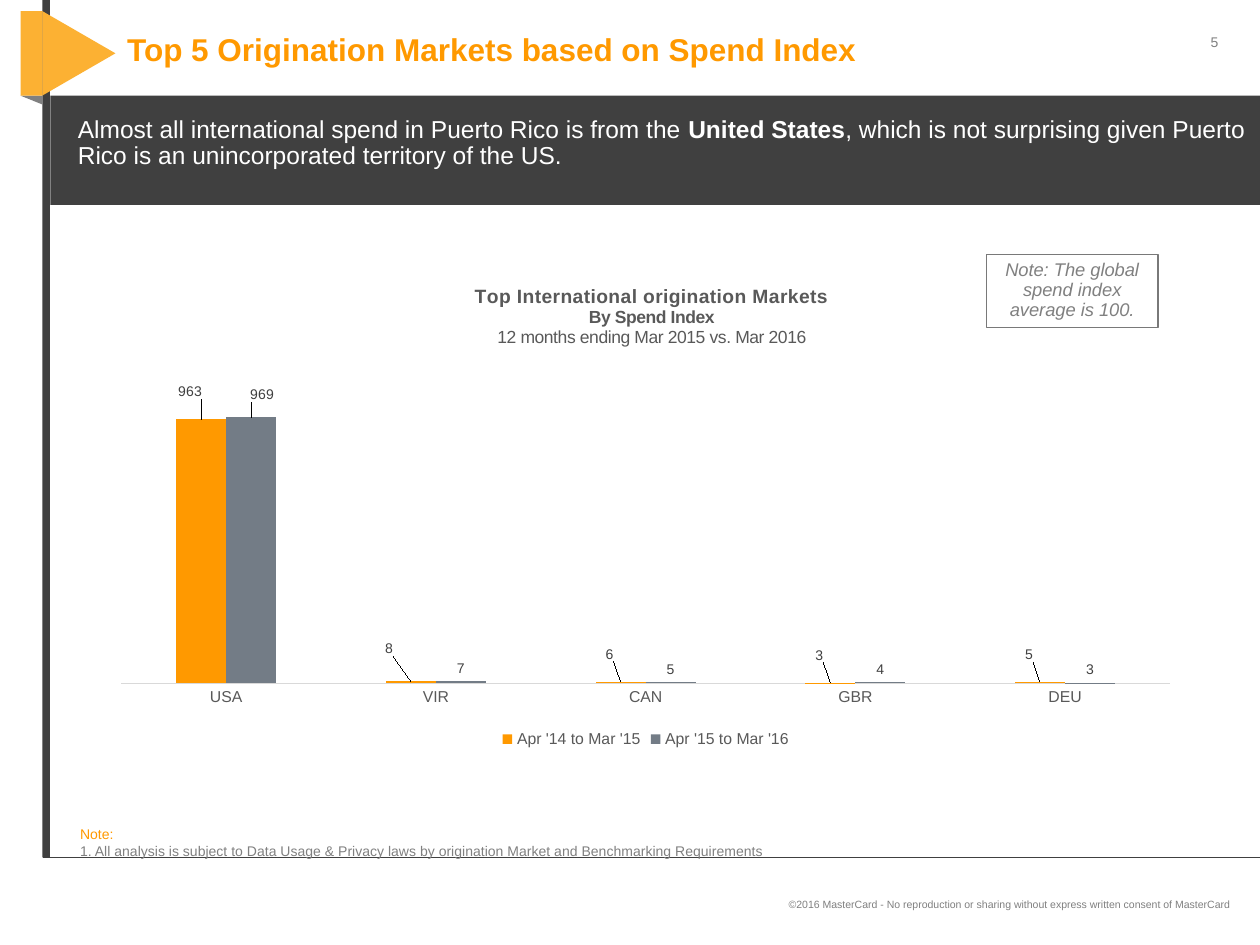
from lxml.etree import SubElement
from pptx import Presentation
from pptx.chart.data import CategoryChartData
from pptx.dml.color import RGBColor
from pptx.enum.chart import XL_CHART_TYPE, XL_LABEL_POSITION, XL_LEGEND_POSITION, XL_TICK_MARK
from pptx.enum.shapes import MSO_CONNECTOR, MSO_SHAPE
from pptx.enum.text import MSO_ANCHOR, MSO_AUTO_SIZE, PP_ALIGN
from pptx.oxml import parse_xml
from pptx.oxml.ns import nsdecls, qn
from pptx.util import Pt

ORANGE = RGBColor(0xFF, 0x99, 0x00)
AMBER = RGBColor(0xFC, 0xB1, 0x33)
SLATE = RGBColor(0x73, 0x7C, 0x86)
DARK = RGBColor(0x40, 0x40, 0x40)
TEXT = RGBColor(0x59, 0x59, 0x59)
BORDER = RGBColor(0x79, 0x79, 0x79)
GRAY = RGBColor(0x80, 0x80, 0x80)
LIGHT = RGBColor(0xD9, 0xD9, 0xD9)
WHITE = RGBColor(0xFF, 0xFF, 0xFF)


def style(font, color, **values):
    font.color.rgb = color
    for name, value in {"name": "Arial", **values}.items():
        setattr(font, name, value)


def manual_layout(x, y, w=None, h=None, inner=False):
    """Return a c:layout element; values are fractions of the chart."""
    mode = "edge" if inner else None
    parts = '<c:layoutTarget val="inner"/>' if inner else ""
    if mode:
        parts += '<c:xMode val="edge"/><c:yMode val="edge"/>'
    for tag, value in zip("xywh", (x, y, w, h)):
        if value is not None:
            parts += f'<c:{tag} val="{value}"/>'
    return parse_xml(f'<c:layout {nsdecls("c")}><c:manualLayout>{parts}</c:manualLayout></c:layout>')


prs = Presentation()
prs.slide_width, prs.slide_height = Pt(720), Pt(540)
s = prs.slides.add_slide(prs.slide_layouts[5])

# Side bar, arrow and banner
for kind, x, y, w, h, rotation, color in (
    (MSO_SHAPE.RECTANGLE, 24.3, 0, 4.3, 490, 0, DARK),
    (MSO_SHAPE.RIGHT_TRIANGLE, 11.8, 54.7, 12.4, 5, 180, GRAY),
    (MSO_SHAPE.ISOSCELES_TRIANGLE, 20.9, 9.6, 48.3, 41.8, 90, AMBER),
    (MSO_SHAPE.RECTANGLE, 11.8, 6.4, 12.4, 48.3, 0, AMBER),
    (MSO_SHAPE.RECTANGLE, 28.8, 54.7, 691.2, 62.4, 0, DARK),
):
    sp = s.shapes.add_shape(kind, Pt(x), Pt(y), Pt(w), Pt(h))
    sp.shadow.inherit = False
    sp.rotation = rotation
    sp.fill.solid()
    sp.fill.fore_color.rgb = color
    sp.line.fill.background()

rule = s.shapes.add_connector(MSO_CONNECTOR.STRAIGHT, Pt(24.3), Pt(490), Pt(720), Pt(490))
rule.line.color.rgb = DARK
rule.line.width = Pt(0.75)
SubElement(rule._element.spPr, qn("a:effectLst"))

# Title
title = s.shapes.title
title.left, title.top, title.width, title.height = Pt(65.5), Pt(6.5), Pt(570), Pt(48)
tf = title.text_frame
tf.auto_size = MSO_AUTO_SIZE.NONE
tf.vertical_anchor = MSO_ANCHOR.MIDDLE
p = tf.paragraphs[0]
p.alignment = PP_ALIGN.LEFT
p.line_spacing = Pt(16)
r = p.add_run()
r.text = "Top 5 Origination Markets based on Spend Index"
style(r.font, ORANGE, size=Pt(18), bold=True)

# Chart
data = CategoryChartData(number_format="#,##0")
data.categories = ["USA", "VIR", "CAN", "GBR", "DEU"]
data.add_series("Apr '14 to Mar '15", (963, 8, 6, 3, 5))
data.add_series("Apr '15 to Mar '16", (969, 7, 5, 4, 3))
chart = s.shapes.add_chart(
    XL_CHART_TYPE.COLUMN_CLUSTERED, Pt(56.9), Pt(145.4), Pt(624.2), Pt(285.1), data
).chart
style(chart.font, TEXT, size=Pt(10))

chart.has_title = True
tf = chart.chart_title.text_frame
for i, (text, size, bold, spacing) in enumerate((
    ("Top International origination Markets", 11, True, 10),
    ("By Spend Index", 10, True, -10),
    ("12 months ending Mar 2015 vs. Mar 2016", 10, False, -10),
)):
    p = tf.add_paragraph() if i else tf.paragraphs[0]
    r = p.add_run()
    r.text = text
    style(r.font, TEXT, size=Pt(size), bold=bold)
    r.font._element.set("spc", str(spacing))
title_layout = manual_layout(0.34, 0.05)
for tag in ("c:yMode", "c:xMode"):
    mode = title_layout[0].makeelement(qn(tag), {"val": "edge"})
    title_layout[0].insert(0, mode)
chart_title = chart.chart_title._element
for old in chart_title.findall(qn("c:layout")):
    chart_title.remove(old)
chart_title.find(qn("c:tx")).addnext(title_layout)

plot_area = chart._chartSpace.chart.plotArea
for old in plot_area.findall(qn("c:layout")):
    plot_area.remove(old)
plot_area.insert(0, manual_layout(0.02, 0.2, 0.96, 0.66, inner=True))

chart.has_legend = True
chart.legend.position = XL_LEGEND_POSITION.BOTTOM
chart.legend.include_in_layout = False
style(chart.legend.font, TEXT, size=Pt(9))

axis = chart.category_axis
axis.major_tick_mark = XL_TICK_MARK.NONE
axis.format.line.color.rgb = LIGHT
axis.format.line.width = Pt(0.75)
style(axis.tick_labels.font, TEXT, size=Pt(9))
axis = chart.value_axis
axis.has_major_gridlines = False
axis.visible = False
axis.minimum_scale, axis.maximum_scale = 0, 1200

plot = chart.plots[0]
plot.gap_width, plot.overlap = 219, 0
plot.vary_by_categories = False
label_shifts = (
    {0: (-0.01, -0.03), 1: (-0.02, -0.04), 2: (-0.01, -0.03), 3: (-0.01, -0.03), 4: (-0.01, -0.03)},
    {0: (0.01, -0.02)},
)
for series, color, shifts in zip(plot.series, (ORANGE, SLATE), label_shifts):
    series.format.fill.solid()
    series.format.fill.fore_color.rgb = color
    labels = series.data_labels
    labels.show_value = True
    labels.position = XL_LABEL_POSITION.OUTSIDE_END
    style(labels.font, DARK, size=Pt(8))
    for i, shift in shifts.items():
        label = series.points[i].data_label
        label.position = XL_LABEL_POSITION.OUTSIDE_END
        style(label.font, DARK, size=Pt(8))
        label._dLbl.find(qn("c:idx")).addnext(manual_layout(*shift))

# Texts: box, anchor, alignment, wrap, line spacing, paragraphs of (text, colour, size, format)
for (x, y, w, h), anchor, align, wrap, spacing, paragraphs in (
    ((681.8, 15.8, 24.5, 17.3), MSO_ANCHOR.TOP, PP_ALIGN.CENTER, False, 1,
     [[("5", GRAY, 8, {})]]),
    ((7.9, 497.5, 702, 38.9), MSO_ANCHOR.MIDDLE, PP_ALIGN.RIGHT, True, 1,
     [[("©2016 MasterCard - No reproduction or sharing without express written consent of MasterCard",
        GRAY, 6, {})]]),
    ((37.4, 63.4, 690.5, 38.2), MSO_ANCHOR.TOP, PP_ALIGN.LEFT, True, 0.9,
     [[("Almost all international spend in Puerto Rico is from the ", WHITE, 14, {}),
       ("United States", WHITE, 14, {"bold": True}),
       (", which is not surprising given Puerto Rico is an unincorporated territory of the US.",
        WHITE, 14, {})]]),
    ((38.7, 461.5, 662.5, 33.1), MSO_ANCHOR.BOTTOM, PP_ALIGN.LEFT, True, 1,
     [[("Note:", ORANGE, 8, {})],
      [("1. All analysis is subject to Data Usage & Privacy laws by origination Market and "
        "Benchmarking Requirements", GRAY, 8, {})]]),
    ((563.8, 145.4, 97.9, 41.8), MSO_ANCHOR.TOP, PP_ALIGN.CENTER, True, 0.9,
     [[("Note: The global spend index average is 100.", GRAY, 10.5, {"italic": True})]]),
):
    sp = s.shapes.add_textbox(Pt(x), Pt(y), Pt(w), Pt(h))
    tf = sp.text_frame
    tf.word_wrap, tf.vertical_anchor = wrap, anchor
    for i, runs in enumerate(paragraphs):
        p = tf.add_paragraph() if i else tf.paragraphs[0]
        p.alignment, p.line_spacing = align, spacing
        for text, color, size, values in runs:
            r = p.add_run()
            r.text = text
            style(r.font, color, size=Pt(size), **values)
# The last box is the framed note
sp.line.color.rgb = BORDER
sp.line.width = Pt(0.75)

prs.save("out.pptx")
